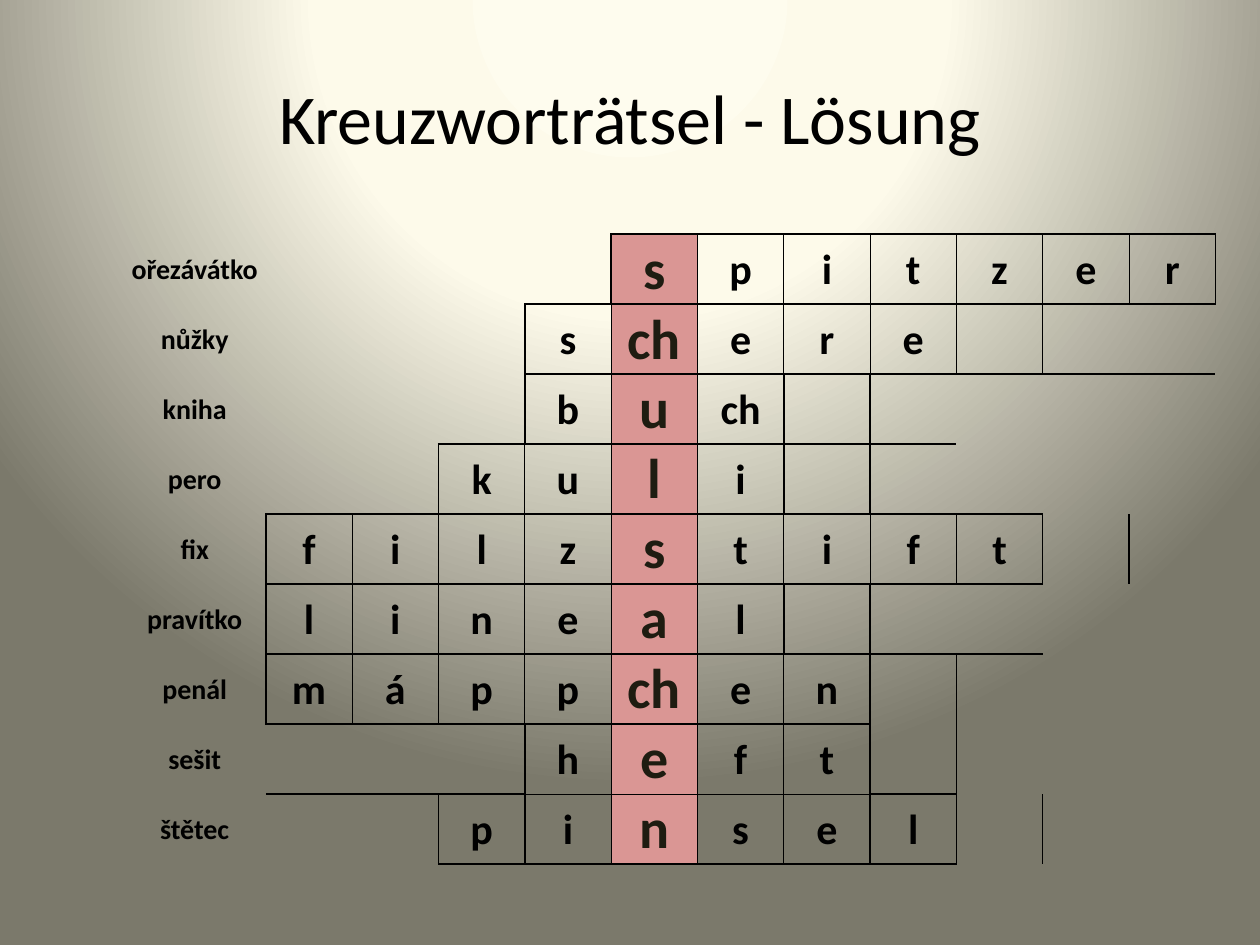
from lxml import etree
from pptx import Presentation
from pptx.dml.color import RGBColor
from pptx.enum import text
from pptx.oxml import parse_xml
from pptx.oxml.ns import nsdecls, qn
from pptx.util import Cm, Pt

TITLE = "Kreuzworträtsel - Lösung"
# Clue, first grid column, letters (one entry per square)
WORDS = [
    ("ořezávátko", 5, "s p i t z e r"),
    ("nůžky", 4, "s ch e r e"),
    ("kniha", 4, "b u ch"),
    ("pero", 3, "k u l i"),
    ("fix", 1, "f i l z s t i f t"),
    ("pravítko", 1, "l i n e a l"),
    ("penál", 1, "m á p p ch e n"),
    ("sešit", 4, "h e f t"),
    ("štětec", 3, "p i n s e l"),
]
COLUMNS = 12
SOLUTION_COLUMN = 5
HEAVY_SQUARES = {(8, 3), (8, 8)}  # squares framed heavily on all sides
LAST_ROW = len(WORDS) - 1

FONT = "Calibri"
COLORS = {"text": "000000", "solution": "1E1C11", "highlight": "DA9694"}
GRADIENT = [(0, "FEFCEE"), (40, "FDFAEA"), (100, "7B796B")]
NO_STYLE = "{2D5ABB26-0587-4C30-8999-92F81FD0307C}"
# Side tag: row step, column step
SIDES = {"lnL": (0, -1), "lnR": (0, 1), "lnT": (-1, 0), "lnB": (1, 0)}

SQUARES = {
    (row, start + offset): letter
    for row, (_, start, letters) in enumerate(WORDS)
    for offset, letter in enumerate(letters.split())
}


def set_background(slide):
    stops = "".join(
        f'<a:gs pos="{position * 1000}"><a:srgbClr val="{color}"/></a:gs>'
        for position, color in GRADIENT
    )
    background = parse_xml(
        f'<p:bg {nsdecls("p", "a")}><p:bgPr><a:gradFill rotWithShape="1">'
        f'<a:gsLst>{stops}</a:gsLst><a:path path="circle">'
        '<a:fillToRect l="50000" t="-80000" r="50000" b="180000"/></a:path>'
        "</a:gradFill><a:effectLst/></p:bgPr></p:bg>"
    )
    slide.element.cSld.insert(0, background)


def write(paragraph, words, size, color, bold):
    paragraph.alignment = text.PP_ALIGN.CENTER
    run = paragraph.add_run()
    run.text = words
    run.font.name = FONT
    run.font.size = Pt(size)
    run.font.bold = bold
    run.font.color.rgb = RGBColor.from_string(COLORS[color])


def fill_cell(cell, words, size, color):
    cell.vertical_anchor = text.MSO_ANCHOR.MIDDLE
    cell.margin_left = cell.margin_right = cell.margin_top = Cm(0.03)
    cell.margin_bottom = 0
    write(cell.text_frame.paragraphs[0], words, size, color, True)


def border_width(place, neighbour):
    pair = {place, neighbour}
    if not pair & SQUARES.keys():
        return None
    if pair & HEAVY_SQUARES or not pair <= SQUARES.keys():
        return 1
    same_row = place[0] == neighbour[0]
    return 0.5 if same_row or LAST_ROW in (place[0], neighbour[0]) else 1


def set_borders(cell, row, column):
    properties = cell._tc.get_or_add_tcPr()
    position = 0
    for tag, (down, right) in SIDES.items():
        width = border_width((row, column), (row + down, column + right))
        if width is None:
            continue
        line = etree.Element(qn(f"a:{tag}"), w=str(Pt(width)))
        solid = etree.SubElement(line, qn("a:solidFill"))
        etree.SubElement(solid, qn("a:srgbClr"), val=COLORS["text"])
        properties.insert(position, line)
        position += 1


def add_crossword(slide):
    frame = slide.shapes.add_table(
        len(WORDS), COLUMNS, Cm(2.49), Cm(4.72), Cm(22), Cm(12.47)
    )
    table = frame.table
    table.first_row = table.horz_banding = False
    table._tbl.tblPr.find(qn("a:tableStyleId")).text = NO_STYLE
    for index, column in enumerate(table.columns):
        column.width = Cm(1.74) if index else Cm(2.87)
    for index, row in enumerate(table.rows):
        row.height = Cm(1.35) if index else Cm(1.41)

    for row, (clue, _, _) in enumerate(WORDS):
        fill_cell(table.cell(row, 0), clue, 16, "text")
        for column in range(COLUMNS):
            cell = table.cell(row, column)
            cell.fill.background()
            if (row, column) in SQUARES:
                solution = column == SOLUTION_COLUMN
                size, color = (32, "solution") if solution else (24, "text")
                fill_cell(cell, SQUARES[row, column], size, color)
                if solution:
                    cell.fill.solid()
                    cell.fill.fore_color.rgb = RGBColor.from_string(COLORS["highlight"])
            set_borders(cell, row, column)


def main():
    presentation = Presentation()
    presentation.slide_width, presentation.slide_height = Cm(25.4), Cm(19.05)
    slide = presentation.slides.add_slide(presentation.slide_layouts[5])
    set_background(slide)
    add_crossword(slide)

    # Title
    title = slide.shapes.title
    title.left, title.top = Cm(1.27), Cm(0.76)
    title.width, title.height = Cm(22.86), Cm(3.18)
    title.text_frame.vertical_anchor = text.MSO_ANCHOR.MIDDLE
    write(title.text_frame.paragraphs[0], TITLE, 40, "text", False)

    presentation.save("out.pptx")


if __name__ == "__main__":
    main()
